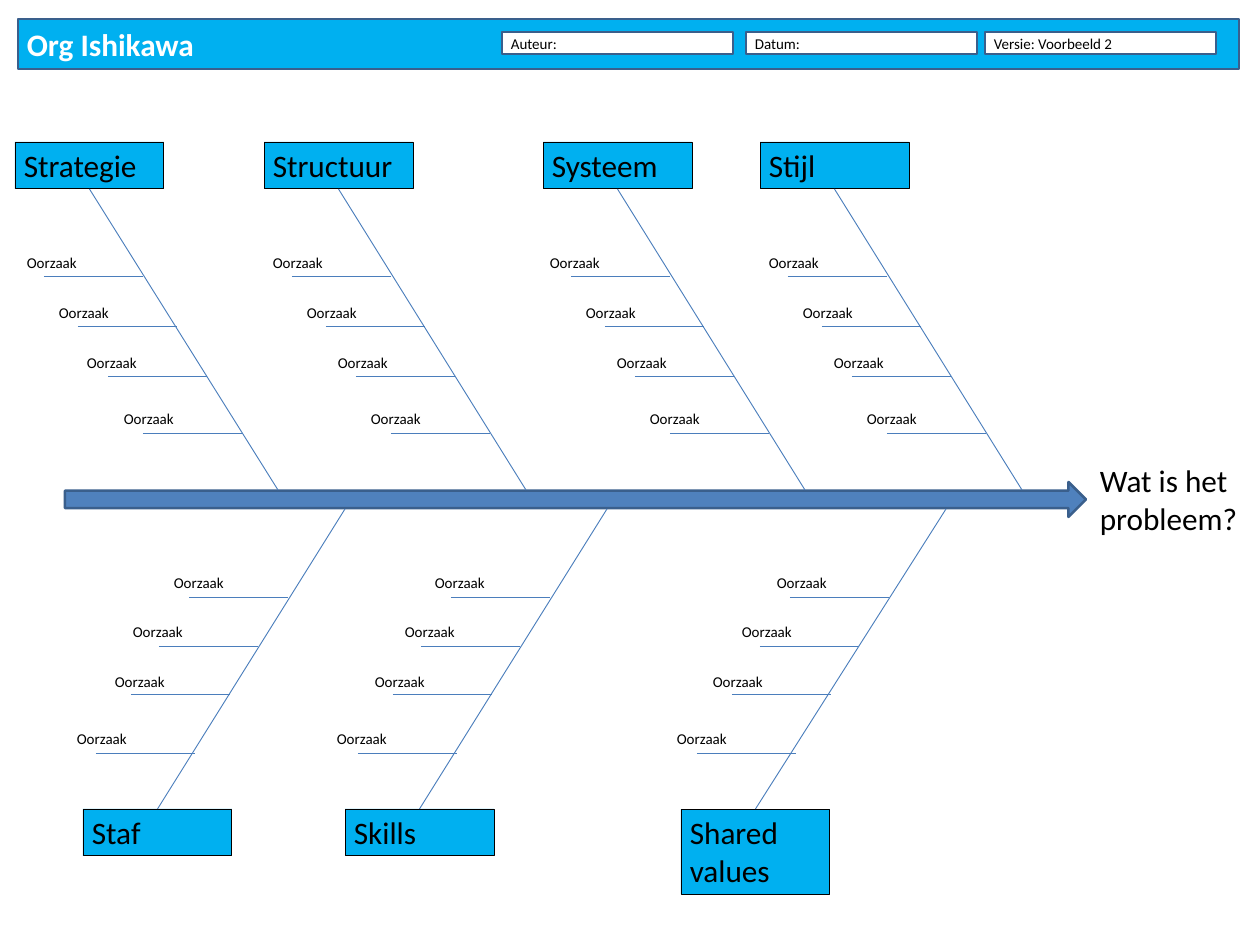
from lxml.etree import SubElement
from pptx import Presentation
from pptx.dml.color import RGBColor
from pptx.enum.shapes import MSO_CONNECTOR, MSO_SHAPE
from pptx.enum.text import MSO_ANCHOR as Anchor, MSO_AUTO_SIZE as AutoSize, PP_ALIGN as Align
from pptx.oxml.ns import qn
from pptx.util import Pt

PX = 10160  # EMU per px, 90 px to the inch
CYAN = RGBColor(0x00, 0xB0, 0xF0)
BLUE = RGBColor(0x4F, 0x81, 0xBD)
EDGE = RGBColor(0x3A, 0x5F, 0x8C)
BONE = RGBColor(0x4B, 0x7E, 0xBC)
BLACK = RGBColor(0, 0, 0)
WHITE = RGBColor(255, 255, 255)
BOTTOM_SIDE, TOP_SIDE = 2, 0  # connection sites of a rectangle

prs = Presentation()
prs.slide_width, prs.slide_height = 1260 * PX, 945 * PX
slide = prs.slides.add_slide(prs.slide_layouts[6])
shapes = slide.shapes


def add_box(left, top, width, height, text="", size=25, color=BLACK, fill=None,
            edge=None, edge_width=2, kind=MSO_SHAPE.RECTANGLE, grow=False):
    frame = [n * PX for n in (left, top, width, height)]
    if fill is None:
        box = shapes.add_textbox(*frame)
    else:
        box = shapes.add_shape(kind, *frame)
        box.shadow.inherit = False
        box.fill.solid()
        box.fill.fore_color.rgb = fill
        box.line.color.rgb = edge
        box.line.width = Pt(edge_width)
    if text:
        body = box.text_frame
        body.word_wrap = True
        body.vertical_anchor = Anchor.TOP if grow else Anchor.MIDDLE
        body.auto_size = AutoSize.SHAPE_TO_FIT_TEXT if grow else AutoSize.NONE
        paragraph = body.paragraphs[0]
        paragraph.text = text
        paragraph.alignment = Align.LEFT
        paragraph.font.name = "Calibri"
        paragraph.font.size = Pt(size)
        paragraph.font.color.rgb = color
    return box


def add_bone(x1, y1, x2, y2):
    bone = shapes.add_connector(MSO_CONNECTOR.STRAIGHT, x1 * PX, y1 * PX, x2 * PX, y2 * PX)
    bone.line.color.rgb = BONE
    bone.line.width = Pt(0.75)
    SubElement(bone._element.spPr, qn("a:effectLst"))
    return bone


# Spine and problem
add_box(65, 482, 1021, 35, fill=BLUE, edge=EDGE, kind=MSO_SHAPE.RIGHT_ARROW)
add_box(1091, 457, 156, 85, "Wat is het probleem?", grow=True)

# Each side: box top, spine y, box side to join, cause lines (offset from
# the spine end, y), label tops, categories
SIDES = [
    (142, 490, BOTTOM_SIDE, [(-234, 276), (-200, 326), (-170, 376), (-135, 433)],
     [249, 299, 349, 405], [
        # name, box left, box height, spine end x, label lefts
        ("Strategie", 15, 47, 278, [18, 50, 78, 115]),
        ("Structuur", 264, 47, 526, [264, 298, 329, 362]),
        ("Systeem", 543, 47, 805, [541, 577, 608, 641]),
        ("Stijl", 760, 47, 1022, [760, 794, 825, 858]),
    ]),
    (809, 509, TOP_SIDE, [(-156, 597), (-186, 646), (-214, 694), (-249, 753)],
     [569, 618, 668, 725], [
        ("Staf", 83, 47, 345, [165, 124, 106, 68]),
        ("Skills", 345, 47, 607, [426, 396, 366, 328]),
        ("Shared values", 681, 85, 946, [768, 733, 704, 668]),
    ]),
]

for box_top, spine_y, site, causes, label_tops, categories in SIDES:
    for name, left, height, spine_x, label_lefts in categories:
        category = add_box(left, box_top, 149, height, name, fill=CYAN,
                           edge=BLACK, edge_width=0.75, grow=True)
        rib = add_bone(left + 75, box_top, spine_x, spine_y)
        rib.begin_connect(category, site)
        for (offset, y), label_left, label_top in zip(causes, label_lefts, label_tops):
            add_bone(spine_x + offset, y, spine_x + offset + 99, y)
            add_box(label_left, label_top, 128, 27, "Oorzaak", size=12, grow=True)

# Header
title = add_box(18, 19, 1221, 50, "Org Ishikawa", color=WHITE, fill=CYAN, edge=EDGE)
title.text_frame.paragraphs[0].font.bold = True
for left, field in [(502, "Auteur:"), (746, "Datum:"), (985, "Versie: Voorbeeld 2")]:
    add_box(left, 32, 231, 22, field, size=12, fill=WHITE, edge=EDGE)

prs.save("out.pptx")
